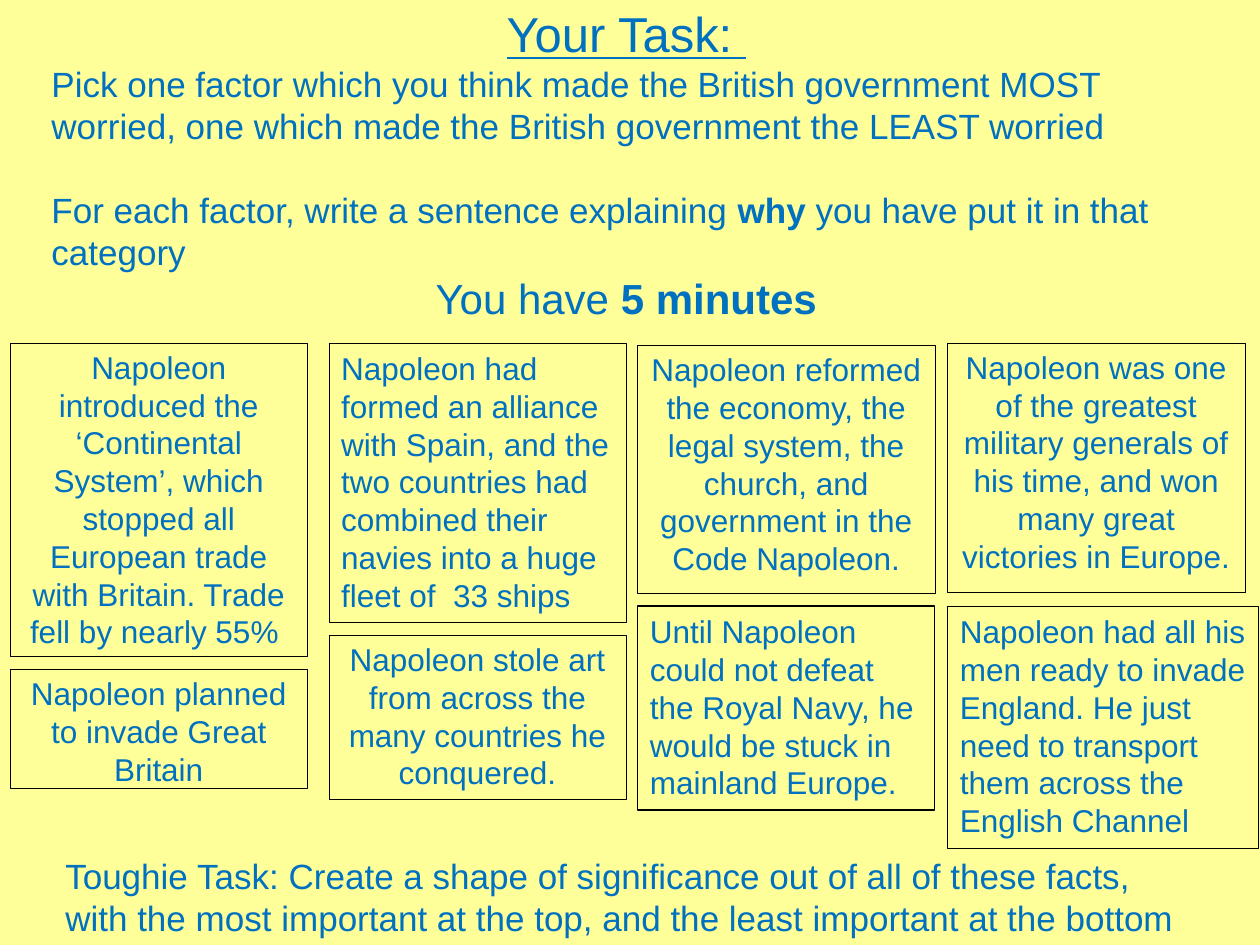
from pptx import Presentation
from pptx.dml.color import RGBColor
from pptx.enum.shapes import MSO_SHAPE
from pptx.enum.text import MSO_ANCHOR, MSO_AUTO_SIZE, PP_ALIGN
from pptx.util import Inches, Pt

YELLOW = RGBColor(0xFF, 0xFF, 0x99)
BLUE = RGBColor(0x00, 0x70, 0xC0)
BLACK = RGBColor(0x00, 0x00, 0x00)
RECTANGLE = MSO_SHAPE.RECTANGLE
TOP = MSO_ANCHOR.TOP
FIT = MSO_AUTO_SIZE.SHAPE_TO_FIT_TEXT
LEFT, CENTER = PP_ALIGN.LEFT, PP_ALIGN.CENTER

FONT = "Arial"
COLUMNS = [0.08, 2.61, 5.06, 7.52]
CARD_WIDTH = 2.36
UPPER_ROW, LOWER_ROW = 2.72, 4.81

# column, top, width, height, alignment, outline, text
CARDS = [
    (0, UPPER_ROW, CARD_WIDTH, 2.49, CENTER, 0.25,
     "Napoleon introduced the ‘Continental System’, which stopped all "
     "European trade with Britain. Trade fell by nearly 55% "),
    (0, 5.31, CARD_WIDTH, 0.95, CENTER, 0.25,
     "Napoleon planned to invade Great Britain"),
    (1, UPPER_ROW, CARD_WIDTH, 2.22, LEFT, 0.25,
     "Napoleon had formed an alliance with Spain, and the two countries had "
     "combined their navies into a huge fleet of  33 ships"),
    (1, 5.04, CARD_WIDTH, 1.3, CENTER, 0.25,
     "Napoleon stole art from across the many countries he conquered."),
    (2, 2.74, CARD_WIDTH, 1.97, CENTER, 0.25,
     "Napoleon reformed the economy, the legal system, the church, and "
     "government in the Code Napoleon."),
    (2, LOWER_ROW, CARD_WIDTH, 1.62, LEFT, 0.75,
     "Until Napoleon could not defeat the Royal Navy, he would be stuck in "
     "mainland Europe."),
    (3, UPPER_ROW, CARD_WIDTH, 1.98, CENTER, 0.25,
     "Napoleon was one of the greatest military generals of his time, and won "
     "many great victories in Europe."),
    (3, LOWER_ROW, 2.47, 1.92, LEFT, 0.25,
     "Napoleon had all his men ready to invade England. He just need to "
     "transport them across the English Channel"),
]


def write(paragraph, runs, size, alignment=LEFT):
    """Fill a paragraph from (text, bold) pairs."""
    paragraph.alignment = alignment
    paragraph.font.name = FONT
    paragraph.font.size = Pt(size)
    paragraph.font.color.rgb = BLUE
    for text, bold in runs:
        run = paragraph.add_run()
        run.text = text
        if bold:
            run.font.bold = True


def add_card(slide, column, top, width, height, alignment, outline, text):
    shape = slide.shapes.add_shape(
        RECTANGLE, Inches(COLUMNS[column]), Inches(top),
        Inches(width), Inches(height))
    shape.shadow.inherit = False
    shape.fill.background()
    shape.line.color.rgb = BLACK
    shape.line.width = Pt(outline)
    frame = shape.text_frame
    frame.word_wrap = True
    frame.vertical_anchor = TOP
    if alignment == CENTER:
        frame.margin_left = frame.margin_right = Inches(0.07)
        frame.margin_top = frame.margin_bottom = Inches(0.04)
    else:
        frame.auto_size = FIT
    write(frame.paragraphs[0], [(text, False)], 18, alignment)


def add_text(slide, left, top, width, height):
    box = slide.shapes.add_textbox(
        Inches(left), Inches(top), Inches(width), Inches(height))
    frame = box.text_frame
    frame.word_wrap = True
    frame.auto_size = FIT
    return frame


def add_task(slide):
    frame = add_text(slide, 0.31, -0.02, 9.32, 2.66)
    title = frame.paragraphs[0]
    write(title, [("Your Task: ", False)], 28, CENTER)
    title.font.underline = True
    choice = frame.add_paragraph()
    write(choice, [("Pick one factor which you think made the British government "
                    "MOST worried, one which made the British government the "
                    "LEAST worried", False)], 20)
    choice.space_after = Pt(24)
    write(frame.add_paragraph(),
          [("For each factor, write a sentence explaining ", False),
           ("why", True),
           (" you have put it in that category", False)], 20)
    write(frame.add_paragraph(),
          [("You have ", False), ("5 minutes", True)], 24, CENTER)


def add_toughie(slide):
    frame = add_text(slide, 0.42, 6.73, 9.1, 0.77)
    write(frame.paragraphs[0],
          [("Toughie Task: Create a shape of significance out of all of these "
            "facts, with the most important at the top, and the least important "
            "at the bottom", False)], 20)


def main():
    presentation = Presentation()
    presentation.slide_width = Inches(10)
    presentation.slide_height = Inches(7.5)
    slide = presentation.slides.add_slide(presentation.slide_layouts[6])
    slide.background.fill.solid()
    slide.background.fill.fore_color.rgb = YELLOW
    for card in CARDS:
        add_card(slide, *card)
    add_task(slide)
    add_toughie(slide)
    presentation.save("out.pptx")


if __name__ == "__main__":
    main()
